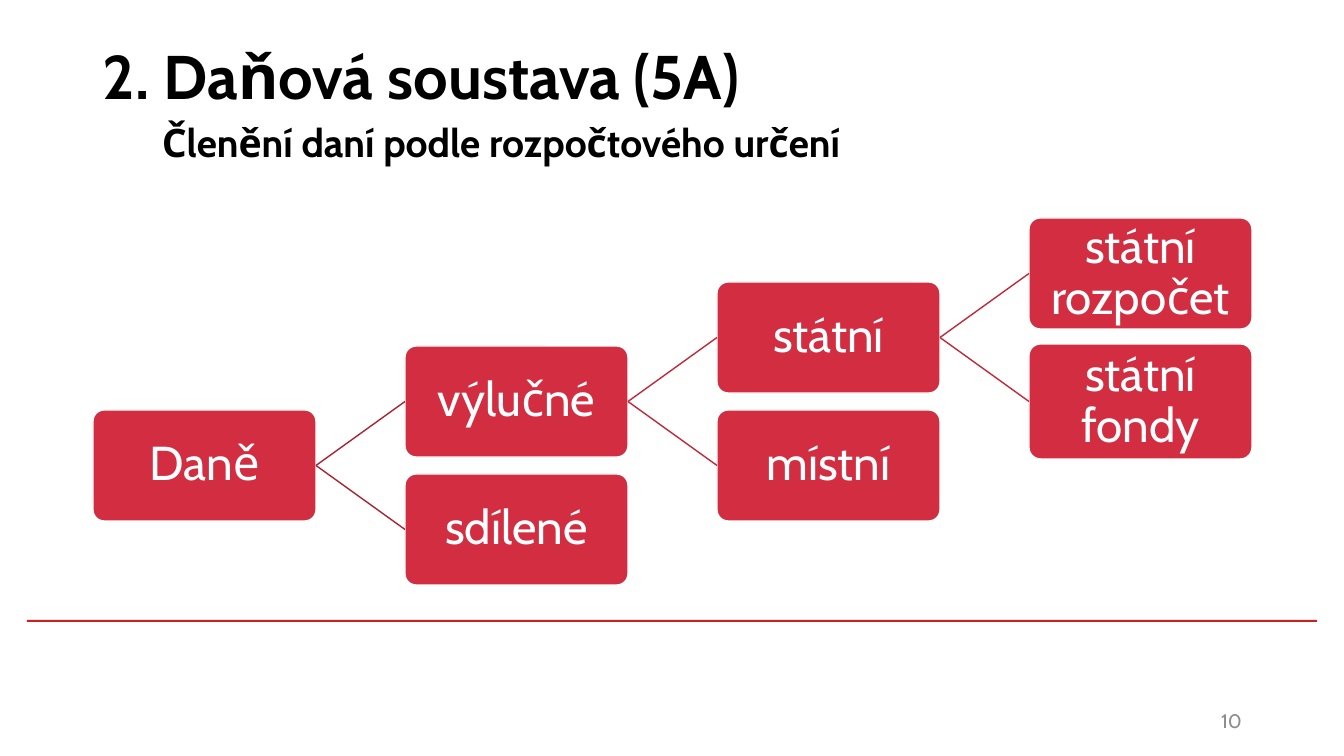
from lxml import etree
from pptx import Presentation
from pptx.dml.color import RGBColor
from pptx.enum.shapes import MSO_CONNECTOR, MSO_SHAPE
from pptx.enum.text import MSO_ANCHOR, PP_ALIGN
from pptx.oxml.ns import qn
from pptx.util import Pt

PX = 914400 / 100.8
FONT = "Cabin"
RECT, ROUNDED = MSO_SHAPE.RECTANGLE, MSO_SHAPE.ROUNDED_RECTANGLE
STRAIGHT = MSO_CONNECTOR.STRAIGHT
TOP, MIDDLE = MSO_ANCHOR.TOP, MSO_ANCHOR.MIDDLE
LEFT, CENTER, RIGHT = PP_ALIGN.LEFT, PP_ALIGN.CENTER, PP_ALIGN.RIGHT
LEFT_SIDE, RIGHT_SIDE = 1, 3

BOX_W, BOX_H = 223, 111
ROOT_X, ROOT_Y = 93, 410
STEP_X, STEP_Y = 312, 64

# name: (text, level, half-rows above the root, height)
NODES = {
    "taxes": ("Daně", 0, 0, BOX_H),
    "exclusive": ("výlučné", 1, 1, BOX_H),
    "shared": ("sdílené", 1, -1, BOX_H),
    "state": ("státní", 2, 2, BOX_H),
    "local": ("místní", 2, 0, BOX_H),
    "budget": ("státní rozpočet", 3, 3, BOX_H),
    "funds": ("státní fondy", 3, 1, BOX_H + 4),
}
BRANCHES = [
    ("taxes", "exclusive", "A82433"),
    ("taxes", "shared", "A82433"),
    ("exclusive", "state", "BF293A"),
    ("exclusive", "local", "BF293A"),
    ("state", "budget", "BF293A"),
    ("state", "funds", "BF293A"),
]


def px(n):
    return round(n * PX)


def rgb(value):
    return RGBColor.from_string(value)


def write(tf, text, size, color, bold=False, align=LEFT, anchor=TOP):
    tf.word_wrap = True
    tf.vertical_anchor = anchor
    p = tf.paragraphs[0]
    p.alignment = align
    r = p.add_run()
    r.text = text
    r.font.name = FONT
    r.font.size = Pt(size)
    r.font.bold = bold
    r.font.color.rgb = rgb(color)
    return p


def add_text(slide, x, y, w, h, text, size, color, **style):
    sp = slide.shapes.add_textbox(px(x), px(y), px(w), px(h))
    write(sp.text_frame, text, size, color, **style)


def add_filled(slide, kind, x, y, w, h, color):
    sp = slide.shapes.add_shape(kind, px(x), px(y), px(w), px(h))
    sp.shadow.inherit = False
    sp.fill.solid()
    sp.fill.fore_color.rgb = rgb(color)
    sp.line.fill.background()
    return sp


def add_node(slide, text, level, rise, height):
    x = ROOT_X + STEP_X * level
    y = ROOT_Y - STEP_Y * rise - (height - BOX_H) // 2
    sp = add_filled(slide, ROUNDED, x, y, BOX_W, height, "D22D40")
    sp.adjustments[0] = 0.1
    sp.line.color.rgb = rgb("FFFFFF")
    sp.line.width = Pt(1)
    tf = sp.text_frame
    tf.margin_left = tf.margin_right = px(5)
    tf.margin_top = tf.margin_bottom = px(5)
    p = write(tf, text, 34, "FFFFFF", align=CENTER, anchor=MIDDLE)
    p.line_spacing = 0.9
    return sp


def add_branch(slide, parent, child, color):
    line = slide.shapes.add_connector(STRAIGHT, 0, 0, 0, 0)
    line.begin_connect(parent, RIGHT_SIDE)
    line.end_connect(child, LEFT_SIDE)
    line.line.color.rgb = rgb(color)
    line.line.width = Pt(1)
    etree.SubElement(line._element.spPr, qn("a:effectLst"))


def main():
    prs = Presentation()
    prs.slide_width, prs.slide_height = px(1344), px(756)
    slide = prs.slides.add_slide(prs.slide_layouts[6])

    add_filled(slide, RECT, 27, 620, 1290, 2, "CD1F21")
    add_text(slide, 93, 2, 1159, 146, "2. Daňová soustava (5A)", 44, "000000",
             bold=True, anchor=MIDDLE)
    add_text(slide, 152, 113, 708, 57, "Členění daní podle rozpočtového určení",
             28, "000000", bold=True)
    add_text(slide, 950, 701, 302, 40, "10", 14, "8C8C8C",
             align=RIGHT, anchor=MIDDLE)

    boxes = {name: add_node(slide, *node) for name, node in NODES.items()}
    for parent, child, color in BRANCHES:
        add_branch(slide, boxes[parent], boxes[child], color)

    prs.save("out.pptx")


if __name__ == "__main__":
    main()
